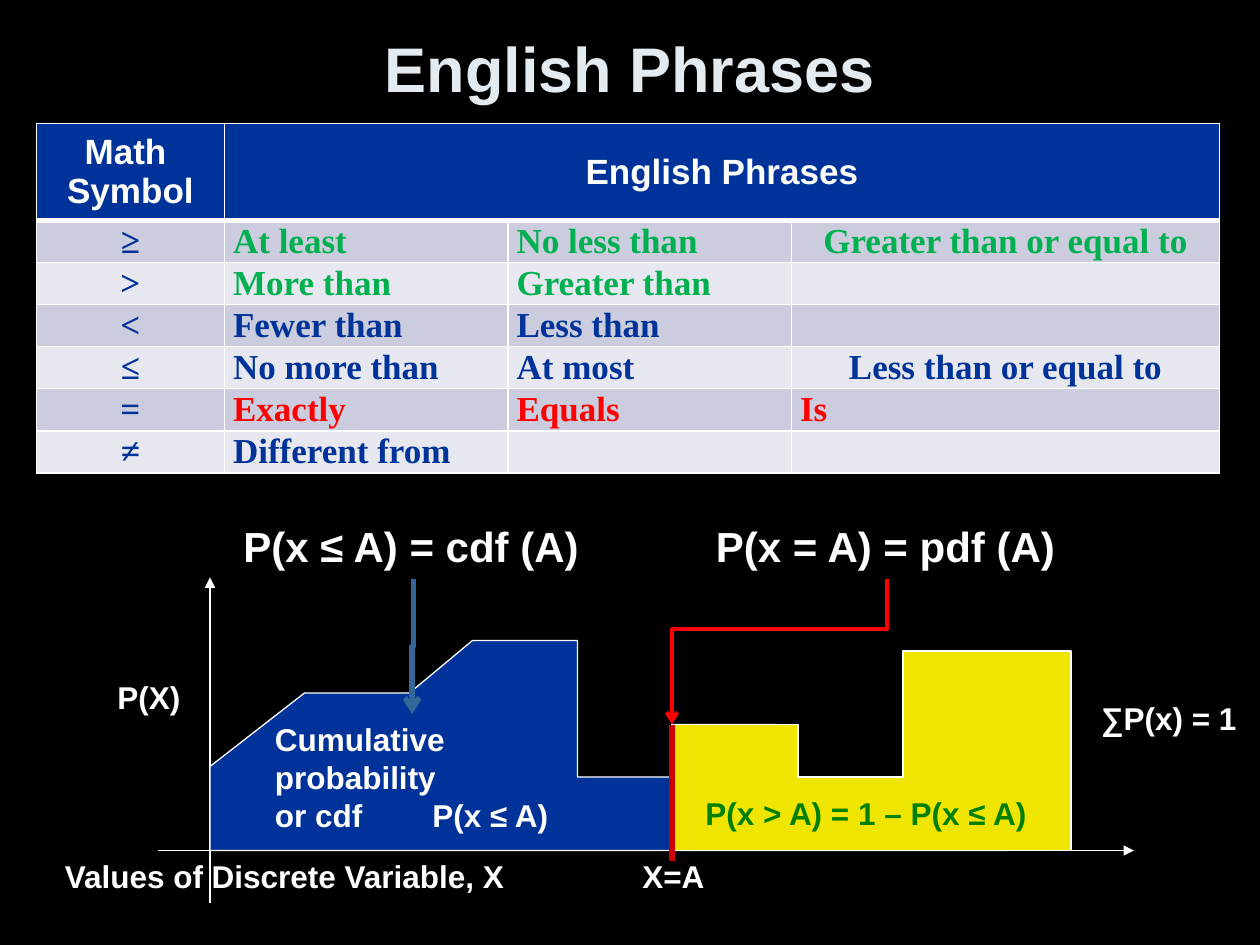
from lxml.etree import SubElement
from pptx import Presentation
from pptx.dml.color import RGBColor
from pptx.enum.shapes import MSO_CONNECTOR
from pptx.enum.text import MSO_ANCHOR, PP_ALIGN
from pptx.oxml.ns import qn
from pptx.util import Inches, Pt

THEME = {
    "black": "000000", "white": "FFFFFF", "pale": "E3EBF1",
    "navy": "003399", "yellow": "F0E500", "steel": "336699",
    "red": "FF0000", "dark": "CC0000", "leaf": "00B050", "green": "008000",
    "bands": ("CBCDDE", "E7E8EF"),
    "sans": "Arial", "serif": "Times New Roman",
    "title": 36, "formula": 24, "cell": 20, "label": 18,
}
UNIT = Inches(1) / 12  # the slide is a grid of 120 columns by 90 rows


def style(para, size, color, face="sans", align=PP_ALIGN.LEFT):
    para.alignment = align
    font = para.font
    font.name, font.size, font.bold = THEME[face], Pt(THEME[size]), True
    font.color.rgb = RGBColor.from_string(THEME[color])


def link(kind, ends, color, width, head=None):
    """Draw a connector between two grid points, with an optional arrowhead."""
    line = slide.shapes.add_connector(kind, *(round(n * UNIT) for n in ends))
    line.line.color.rgb = RGBColor.from_string(THEME[color])
    line.line.width = Pt(width)
    props = line.element.spPr
    if head:
        SubElement(props.find(qn("a:ln")), qn("a:tailEnd"), type=head)
    SubElement(props, qn("a:effectLst"))
    return line


deck = Presentation()
deck.slide_width, deck.slide_height = round(120 * UNIT), round(90 * UNIT)
slide = deck.slides.add_slide(deck.slide_layouts[6])
slide.background.fill.solid()
slide.background.fill.fore_color.rgb = RGBColor.from_string(THEME["black"])

# Title
title = slide.shapes.add_textbox(Inches(0.5), Inches(0.12), Inches(9), Inches(0.83))
title.text_frame.word_wrap = True
title.text_frame.vertical_anchor = MSO_ANCHOR.MIDDLE
title.text_frame.text = "English Phrases"
style(title.text_frame.paragraphs[0], "title", "pale", align=PP_ALIGN.CENTER)

# Table of phrases: symbol colour is fixed, each row has its phrase colour
rows = [
    ("white", "Math \vSymbol", "English Phrases", "", ""),
    ("leaf", "≥", "At least", "No less than", "Greater than or equal to"),
    ("leaf", ">", "More than", "Greater than", ""),
    ("navy", "<", "Fewer than", "Less than", ""),
    ("navy", "≤", "No more than", "At most", "Less than or equal to"),
    ("red", "=", "Exactly", "Equals", "Is"),
    ("navy", "≠", "Different from", "", ""),
]
table = slide.shapes.add_table(
    len(rows), 4, Inches(0.29), Inches(0.98), Inches(9.39), Inches(2.77)).table
for col, width in zip(table.columns, (1.49, 2.25, 2.25, 3.4)):
    col.width = Inches(width)
for r, (color, *texts) in enumerate(rows):
    top = r == 0
    table.rows[r].height = Inches(0.77 if top else 0.333)
    for c, text in enumerate(texts):
        cell = table.cell(r, c)
        cell.vertical_anchor = MSO_ANCHOR.MIDDLE
        cell.margin_left = cell.margin_right = Inches(0.1 if top else 0.07)
        cell.margin_top = cell.margin_bottom = Inches(0.05 if top else 0)
        for side in "LRTB":
            thick = (top and side == "B") or (r == 1 and side == "T")
            edge = SubElement(cell._tc.get_or_add_tcPr(), qn(f"a:ln{side}"),
                              w=str(Pt(3 if thick else 1)))
            paint = SubElement(edge, qn("a:solidFill"))
            SubElement(paint, qn("a:srgbClr"), val=THEME["white"])
        cell.fill.solid()
        cell.fill.fore_color.rgb = RGBColor.from_string(
            THEME["navy"] if top else THEME["bands"][(r - 1) % 2])
        cell.text = text
        mid = top or c == 0 or (c == 3 and text != "Is")
        style(cell.text_frame.paragraphs[0], "cell",
              "navy" if c == 0 and not top else color,
              "sans" if top else "serif",
              PP_ALIGN.CENTER if mid else PP_ALIGN.LEFT)
table.cell(0, 1).merge(table.cell(0, 3))

# Axes
for ends in ((20, 86, 20, 55), (15, 81, 108, 81)):
    link(MSO_CONNECTOR.STRAIGHT, ends, "white", 0.75, "triangle")

# Areas below and above A
areas = [
    ("navy", [(20, 73), (29, 66), (39, 66), (45, 61), (55, 61), (55, 74), (64, 74),
              (64, 69), (74, 69), (74, 74), (86.4, 73.9), (86.4, 61.9), (96, 62),
              (96, 81), (20, 81)]),
    ("yellow", [(64, 81), (64, 69), (75.8, 69), (75.8, 74), (86.5, 74), (86.5, 62),
                (102, 62), (102, 81)]),
]
for color, points in areas:
    path = slide.shapes.build_freeform(*points[0], scale=UNIT)
    path.add_line_segments(points[1:], close=True)
    area = path.convert_to_shape()
    area.shadow.inherit = False
    area.fill.solid()
    area.fill.fore_color.rgb = RGBColor.from_string(THEME[color])
    area.line.color.rgb = RGBColor.from_string(THEME["white"])
    area.line.width = Pt(0.75)

# Labels: left, top, width, height in grid units
labels = [
    (25, 68, 28.5, 12, "label", "white", "Cumulative\nprobability\vor cdf\tP(x ≤ A)"),
    (66, 75, 33.4, 4.8, "label", "green", "P(x > A) = 1 – P(x ≤ A)"),
    (5, 81, 44.6, 4.8, "label", "white", "Values of Discrete Variable, X"),
    (10, 64, 8.4, 4.8, "label", "white", "P(X)"),
    (103.7, 66, 15.4, 4.8, "label", "white", "∑P(x) = 1"),
    (60, 81, 8.3, 4.8, "label", "white", "X=A"),
    (22, 49, 34.7, 6.1, "formula", "white", "P(x ≤ A) = cdf (A)"),
    (67, 49, 35, 6.1, "formula", "white", "P(x = A) = pdf (A)"),
]
for *place, size, color, text in labels:
    frame = slide.shapes.add_textbox(*(round(n * UNIT) for n in place)).text_frame
    frame.word_wrap = True
    frame.margin_right = 0
    for i, part in enumerate(text.split("\n")):
        para = frame.add_paragraph() if i else frame.paragraphs[0]
        para.text = part
        if "\t" in part:
            tabs = SubElement(para._p.get_or_add_pPr(), qn("a:tabLst"))
            SubElement(tabs, qn("a:tab"), pos=str(Inches(1.25)), algn="l")
        style(para, size, color)

# Mark at A, then elbow arrows that leave downwards
link(MSO_CONNECTOR.STRAIGHT, (64, 69, 64, 82), "dark", 3)
elbows = [
    (39.35, 55.1, 39.25, 68, "steel", 3, 50000),
    (84.5, 55.1, 64, 69, "red", 2.25, 34900),
]
for x1, y1, x2, y2, color, width, bend in elbows:
    midx, midy = (x1 + x2) / 2, (y1 + y2) / 2
    halfw, halfh = (y2 - y1) / 2, (x1 - x2) / 2  # sides swap under a quarter turn
    arrow = link(MSO_CONNECTOR.ELBOW,
                 (midx - halfw, midy - halfh, midx + halfw, midy + halfh),
                 color, width, "arrow")
    props = arrow.element.spPr
    props.find(qn("a:xfrm")).set("rot", str(90 * 60000))
    guides = props.find(qn("a:prstGeom")).find(qn("a:avLst"))
    SubElement(guides, qn("a:gd"), name="adj1", fmla=f"val {bend}")

deck.save("out.pptx")
